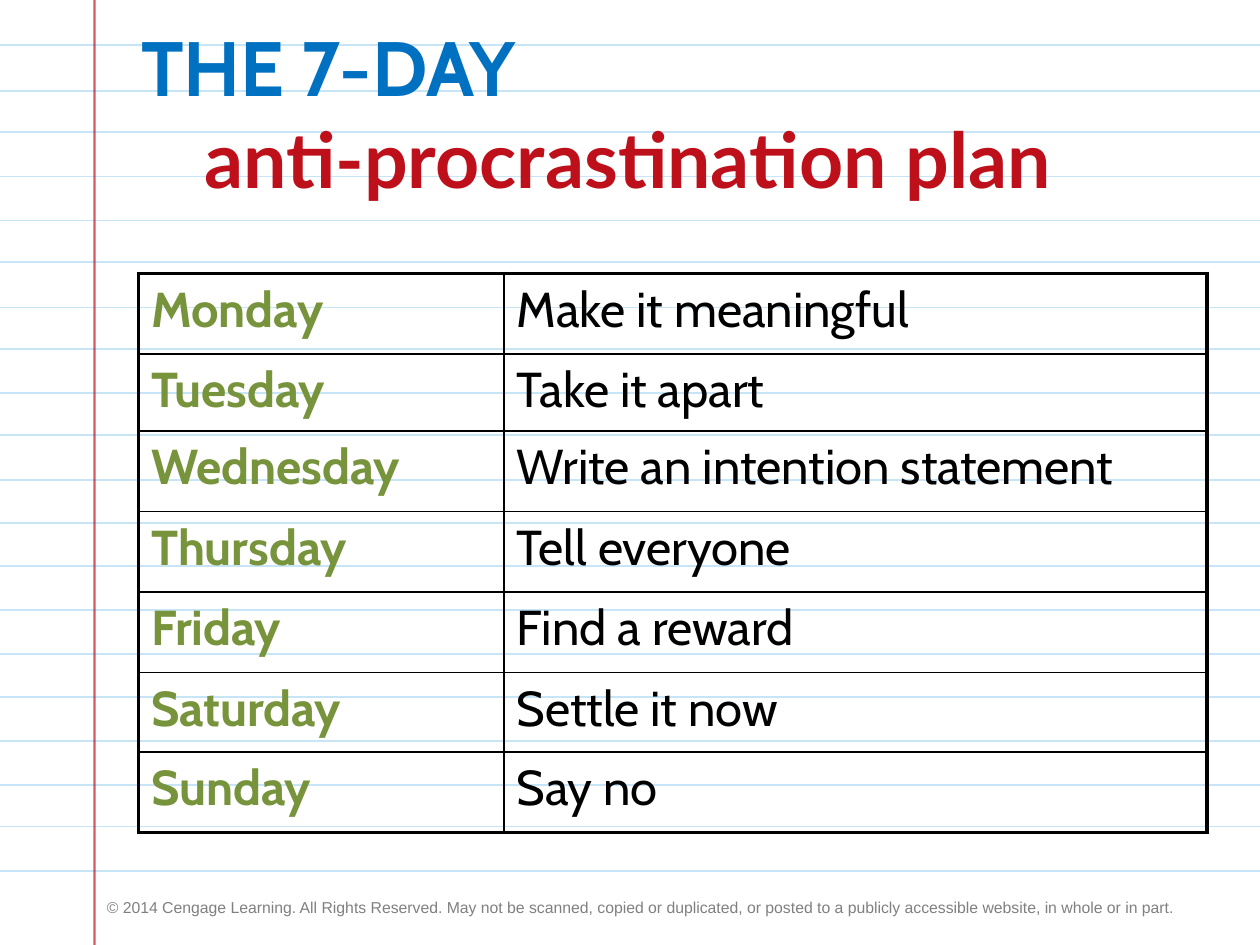
from lxml.etree import SubElement
from pptx import Presentation
from pptx.dml.color import RGBColor
from pptx.enum.shapes import MSO_CONNECTOR
from pptx.enum.text import MSO_ANCHOR, MSO_AUTO_SIZE, PP_ALIGN
from pptx.oxml.ns import qn
from pptx.util import Inches, Pt

# Content
TITLE_LINES = [("THE 7-DAY", "Cabin", "0070C0"),
               ("anti-procrastination plan", "Lato", "BD101B")]
PLAN = [
    ("Monday", "Make it meaningful"),
    ("Tuesday", "Take it apart"),
    ("Wednesday", "Write an intention statement"),
    ("Thursday", "Tell everyone"),
    ("Friday", "Find a reward"),
    ("Saturday", "Settle it now"),
    ("Sunday", "Say no"),
]
COPYRIGHT = ("© 2014 Cengage Learning. All Rights Reserved. May not be scanned, "
             "copied or duplicated, or posted to a publicly accessible website, "
             "in whole or in part.")

# Measures in inches; the paper's rules are slightly uneven
RULE_HEIGHTS = [0.36, 0.72, 1.05, 1.4, 1.75, 2.08, 2.44, 2.77, 3.12, 3.45,
                3.81, 4.15, 4.49, 4.84, 5.19, 5.53, 5.88, 6.23, 6.56, 6.91]
MARGIN_X = 0.75
COLUMN_WIDTHS = [2.9, 5.58]
ROW_HEIGHTS = [0.64, 0.61, 0.64, 0.64, 0.64, 0.63, 0.64]
OUTER_BORDER, INNER_BORDER = 2.25, 1


def color(hex_code):
    return RGBColor.from_string(hex_code)


def write(paragraph, text, font="Cabin", size=28, ink="000000", bold=False):
    run = paragraph.add_run()
    run.text = text
    run.font.name, run.font.size, run.font.bold = font, Pt(size), bold
    run.font.color.rgb = color(ink)
    return run


def draw_line(shapes, start, end, ink, width, alpha=None):
    line = shapes.add_connector(MSO_CONNECTOR.STRAIGHT,
                                *(Inches(value) for value in start + end))
    line.line.color.rgb = color(ink)
    line.line.width = Pt(width)
    properties = line._element.spPr
    SubElement(properties, qn("a:effectLst"))
    if alpha:
        ink_element = properties.find(".//" + qn("a:srgbClr"))
        SubElement(ink_element, qn("a:alpha"), val=str(alpha * 1000))


def add_text_shadow(run):
    effects = SubElement(run._r.get_or_add_rPr(), qn("a:effectLst"))
    shadow = SubElement(effects, qn("a:outerShdw"), blurRad="38100",
                        dist="38100", dir="2700000", algn="tl")
    ink = SubElement(shadow, qn("a:srgbClr"), val="000000")
    SubElement(ink, qn("a:alpha"), val="43000")
    # Effects come between the fill and the typeface
    run._r.rPr.find(qn("a:solidFill")).addnext(effects)


def set_borders(cell, widths):
    properties = cell._tc.get_or_add_tcPr()
    for side, width in zip("LRTB", widths):
        border = SubElement(properties, qn("a:ln" + side), w=str(Pt(width)))
        fill = SubElement(border, qn("a:solidFill"))
        SubElement(fill, qn("a:srgbClr"), val="000000")


def main():
    deck = Presentation()
    deck.slide_width, deck.slide_height = Inches(10), Inches(7.5)
    slide = deck.slides.add_slide(deck.slide_layouts[5])
    shapes = slide.shapes
    title = shapes.title

    # Copyright line
    notice = shapes.add_textbox(Inches(MARGIN_X), Inches(7.08), Inches(8.84), Inches(0.4))
    notice.text_frame.word_wrap = True
    write(notice.text_frame.paragraphs[0], COPYRIGHT, font="Arial", size=9, ink="808080")

    # Notebook paper
    for height in RULE_HEIGHTS:
        draw_line(shapes, (0, height), (10, height), "C7E5F7", 1)
    draw_line(shapes, (MARGIN_X, 0), (MARGIN_X, 7.5), "BD101B", 1.25, alpha=68)

    # Title, in front of the paper
    shapes._spTree.append(title._element)
    title.left, title.top = Inches(1.02), Inches(0.26)
    title.width, title.height = Inches(8.64), Inches(1.25)
    frame = title.text_frame
    frame.word_wrap = True
    frame.auto_size = MSO_AUTO_SIZE.NONE
    frame.vertical_anchor = MSO_ANCHOR.MIDDLE
    heading = frame.paragraphs[0]
    heading.alignment = PP_ALIGN.LEFT
    indent = heading._p.get_or_add_pPr()
    indent.set("marL", str(Inches(0.5)))
    indent.set("indent", str(Inches(-0.5)))
    for number, (text, font, ink) in enumerate(TITLE_LINES):
        if number:
            heading.add_line_break()
        add_text_shadow(write(heading, text, font=font, size=44, ink=ink, bold=True))

    # Plan table
    table = shapes.add_table(len(PLAN), len(COLUMN_WIDTHS), Inches(1.1), Inches(2.17),
                             Inches(sum(COLUMN_WIDTHS)), Inches(sum(ROW_HEIGHTS))).table
    table.first_row = table.horz_banding = False
    for column, width in zip(table.columns, COLUMN_WIDTHS):
        column.width = Inches(width)
    last_row, last_column = len(PLAN) - 1, len(COLUMN_WIDTHS) - 1
    for r, entries in enumerate(PLAN):
        table.rows[r].height = Inches(ROW_HEIGHTS[r])
        for c, text in enumerate(entries):
            cell = table.cell(r, c)
            is_day = c == 0
            write(cell.text_frame.paragraphs[0], text,
                  ink="77933C" if is_day else "000000", bold=is_day)
            on_edge = (c == 0, c == last_column, r == 0, r == last_row)
            set_borders(cell, [OUTER_BORDER if edge else INNER_BORDER for edge in on_edge])
            cell.fill.background()

    deck.save("out.pptx")


if __name__ == "__main__":
    main()
